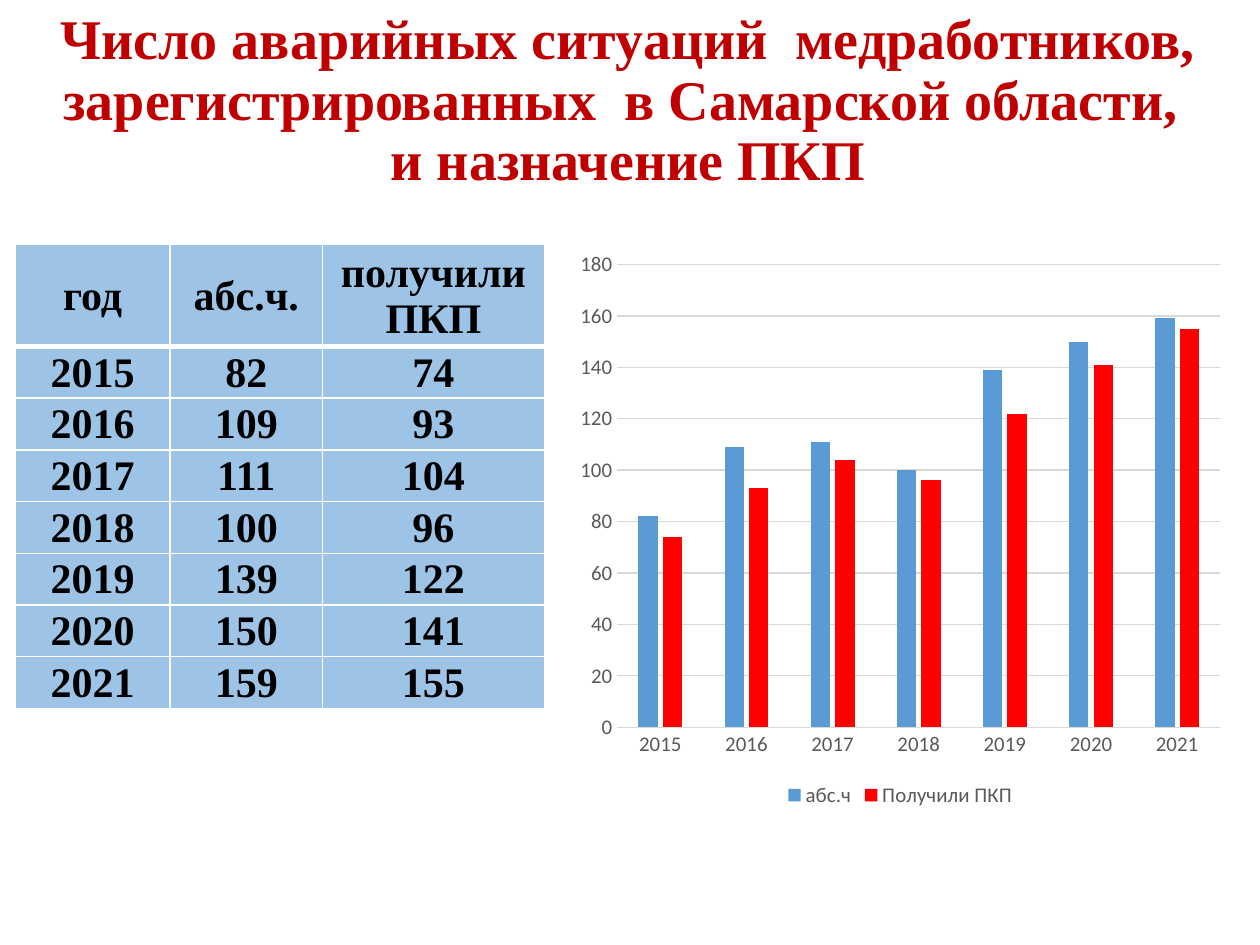
from lxml import etree
from pptx import Presentation, util as u
from pptx.chart.data import CategoryChartData
from pptx.dml.color import RGBColor
from pptx.enum import chart as charts, text as texts
from pptx.oxml.ns import qn

TITLE = "Число аварийных ситуаций  медработников, зарегистрированных  в Самарской области, \vи назначение ПКП"
HEADERS = ("год", "абс.ч.", "получили ПКП")
RECORDS = [
    ("2015", 82, 74),
    ("2016", 109, 93),
    ("2017", 111, 104),
    ("2018", 100, 96),
    ("2019", 139, 122),
    ("2020", 150, 141),
    ("2021", 159, 155),
]
SERIES = [("абс.ч", "5B9BD5"), ("Получили ПКП", "FF0000")]
COLUMN_WIDTHS = (1.23, 1.21, 1.76)
HEADER_HEIGHT, ROW_HEIGHT = 0.81, 0.41
CELL_FILL, GRID, LABEL = "9DC3E6", "D9D9D9", "595959"


def color(value):
    return RGBColor.from_string(value)


def write(frame, content, size, fill, spacing=None):
    frame.word_wrap = True
    paragraph = frame.paragraphs[0]
    paragraph.text = content
    paragraph.alignment = texts.PP_ALIGN.CENTER
    if spacing:
        paragraph.line_spacing = spacing
    for run in paragraph.runs:
        style_font(run.font, "Times New Roman", size, fill, True)


def style_font(font, name, size, fill, bold=False):
    font.name, font.size, font.bold = name, u.Pt(size), bold
    font.color.rgb = color(fill)


def set_borders(cell, widths):
    properties = cell._tc.get_or_add_tcPr()
    for position, (side, width) in enumerate(widths.items()):
        line = etree.Element(qn("a:" + side), w=str(u.Pt(width)))
        solid = etree.SubElement(line, qn("a:solidFill"))
        etree.SubElement(solid, qn("a:srgbClr"), val="FFFFFF")
        properties.insert(position, line)


def add_title(slide):
    box = slide.shapes.add_textbox(u.Inches(0.12), 0, u.Inches(9.73), u.Inches(1.62))
    box.text_frame.vertical_anchor = texts.MSO_ANCHOR.MIDDLE
    write(box.text_frame, TITLE, size=32, fill="C00000", spacing=0.9)


def add_records_table(slide):
    rows = [HEADERS, *RECORDS]
    heights = [HEADER_HEIGHT] + [ROW_HEIGHT] * len(RECORDS)
    table = slide.shapes.add_table(
        len(rows), len(HEADERS), u.Inches(0.12), u.Inches(1.94),
        u.Inches(sum(COLUMN_WIDTHS)), u.Inches(sum(heights))).table
    for column, width in zip(table.columns, COLUMN_WIDTHS):
        column.width = u.Inches(width)
    for index, (row, height, values) in enumerate(zip(table.rows, heights, rows)):
        row.height = u.Inches(height)
        top, bottom = (3 if index == 1 else 1), (3 if index == 0 else 1)
        for cell, value in zip(row.cells, values):
            cell.margin_left = cell.margin_right = cell.margin_top = u.Inches(0.01)
            cell.margin_bottom = 0
            cell.vertical_anchor = texts.MSO_ANCHOR.MIDDLE
            cell.fill.solid()
            cell.fill.fore_color.rgb = color(CELL_FILL)
            write(cell.text_frame, str(value), size=24, fill="000000")
            set_borders(cell, {"lnL": 1, "lnR": 1, "lnT": top, "lnB": bottom})


def style_line(line):
    line.color.rgb = color(GRID)
    line.width = u.Pt(0.75)


def add_records_chart(slide):
    years, *columns = zip(*RECORDS)
    data = CategoryChartData()
    data.categories = years
    for (name, _), values in zip(SERIES, columns):
        data.add_series(name, values)
    chart = slide.shapes.add_chart(
        charts.XL_CHART_TYPE.COLUMN_CLUSTERED, u.Inches(4.5), u.Inches(1.91),
        u.Inches(5.29), u.Inches(4.54), data).chart
    chart.has_title = False
    style_font(chart.font, "Calibri", 10, "000000")
    plot = chart.plots[0]
    plot.vary_by_categories = False
    plot.gap_width, plot.overlap = 219, -27
    for series, (_, fill) in zip(plot.series, SERIES):
        series.format.fill.solid()
        series.format.fill.fore_color.rgb = color(fill)
    chart.has_legend = True
    chart.legend.position = charts.XL_LEGEND_POSITION.BOTTOM
    chart.legend.include_in_layout = False
    style_font(chart.legend.font, "Calibri", 11.9, LABEL)
    for axis in (chart.category_axis, chart.value_axis):
        axis.major_tick_mark = axis.minor_tick_mark = charts.XL_TICK_MARK.NONE
        style_font(axis.tick_labels.font, "Calibri", 11.9, LABEL)
    style_line(chart.category_axis.format.line)
    chart.value_axis.format.line.fill.background()
    chart.value_axis.has_major_gridlines = True
    style_line(chart.value_axis.major_gridlines.format.line)


def main():
    presentation = Presentation()
    presentation.slide_width, presentation.slide_height = u.Inches(10), u.Inches(7.5)
    slide = presentation.slides.add_slide(presentation.slide_layouts[6])
    add_title(slide)
    add_records_table(slide)
    add_records_chart(slide)
    presentation.save("out.pptx")


if __name__ == "__main__":
    main()
